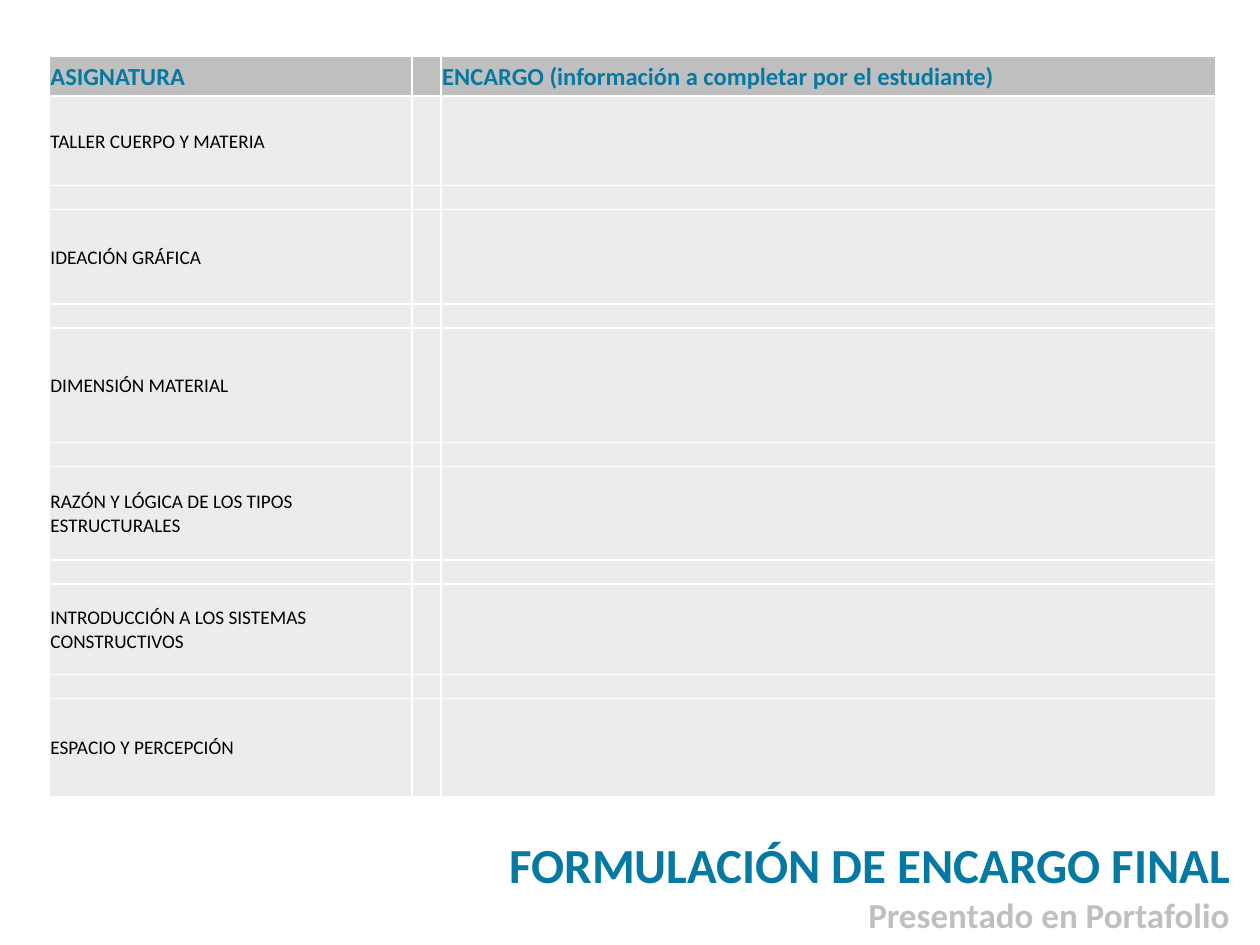
from lxml import etree
from pptx import Presentation
from pptx.dml.color import RGBColor
from pptx.enum.text import MSO_ANCHOR, PP_ALIGN
from pptx.oxml.ns import qn
from pptx.util import Pt

MIDDLE = MSO_ANCHOR.MIDDLE
RIGHT = PP_ALIGN.RIGHT

FONT = "Calibri"
TEAL, GRAY, PALE, WHITE, BLACK = "0679A3", "BFBFBF", "ECECEC", "FFFFFF", "000000"

HEADERS = ["ASIGNATURA", "", "ENCARGO (información a completar por el estudiante)"]
SUBJECTS = [  # name, row height
    ("TALLER CUERPO Y MATERIA", 51.1),
    ("IDEACIÓN GRÁFICA", 54),
    ("DIMENSIÓN MATERIAL", 65.5),
    ("RAZÓN Y LÓGICA DE LOS TIPOS ESTRUCTURALES", 53.3),
    ("INTRODUCCIÓN A LOS SISTEMAS CONSTRUCTIVOS", 51.8),
    ("ESPACIO Y PERCEPCIÓN", 56.2),
]
COLUMN_WIDTHS = [207.4, 16.5, 442.8]
HEADER_HEIGHT, SPACER_HEIGHT = 23, 13.7


def rgb(value):
    return RGBColor.from_string(value)


def set_font(font, size, color, bold=False):
    font.name, font.size, font.bold = FONT, Pt(size), bold
    font.color.rgb = rgb(color)


def set_borders(cell, color, width):
    tcPr = cell._tc.get_or_add_tcPr()
    for i, side in enumerate(("a:lnL", "a:lnR", "a:lnT", "a:lnB")):
        ln = etree.Element(qn(side), w=str(Pt(width)))
        fill = etree.SubElement(ln, qn("a:solidFill"))
        etree.SubElement(fill, qn("a:srgbClr"), val=color)
        tcPr.insert(i, ln)


def fill_cell(cell, text, fill, size, color, bold):
    cell.fill.solid()
    cell.fill.fore_color.rgb = rgb(fill)
    set_borders(cell, WHITE, 1)
    cell.vertical_anchor = MIDDLE
    cell.margin_left = cell.margin_right = cell.margin_top = Pt(0.72)
    cell.margin_bottom = Pt(0)
    p = cell.text_frame.paragraphs[0]
    if text:
        p.text = text
        set_font(p.font, size, color, bold)
    else:
        # Small end mark keeps the spacer rows low
        etree.SubElement(p._p, qn("a:endParaRPr"), sz="1000")


def add_assignment_table(slide):
    # Header, then subject rows with a spacer between each pair
    rows = [(HEADERS, HEADER_HEIGHT)]
    for i, (name, height) in enumerate(SUBJECTS):
        if i:
            rows.append((["", "", ""], SPACER_HEIGHT))
        rows.append(([name, "", ""], height))

    table = slide.shapes.add_table(
        len(rows), len(COLUMN_WIDTHS), Pt(28.1), Pt(32),
        Pt(sum(COLUMN_WIDTHS)), Pt(sum(height for _, height in rows))).table
    for column, width in zip(table.columns, COLUMN_WIDTHS):
        column.width = Pt(width)
    for r, (texts, height) in enumerate(rows):
        table.rows[r].height = Pt(height)
        style = (PALE, 11, BLACK, False) if r else (GRAY, 14, TEAL, True)
        for c, text in enumerate(texts):
            fill_cell(table.cell(r, c), text, *style)


def add_title(slide):
    tf = slide.shapes.add_textbox(Pt(193.7), Pt(473.8), Pt(514), Pt(63.4)).text_frame
    tf.word_wrap = True
    tf.margin_left = tf.margin_right = Pt(5)
    tf.margin_top = tf.margin_bottom = Pt(2.9)
    p = tf.paragraphs[0]
    p.alignment = RIGHT
    for text, size, color in (("FORMULACIÓN DE ENCARGO FINAL ", 28, TEAL),
                              ("Presentado en Portafolio", 20, GRAY)):
        r = p.add_run()
        r.text = text
        set_font(r.font, size, color, True)


def main():
    prs = Presentation()
    prs.slide_width, prs.slide_height = Pt(720), Pt(540)
    slide = prs.slides.add_slide(prs.slide_layouts[6])
    add_title(slide)
    add_assignment_table(slide)
    prs.save("out.pptx")


if __name__ == "__main__":
    main()
